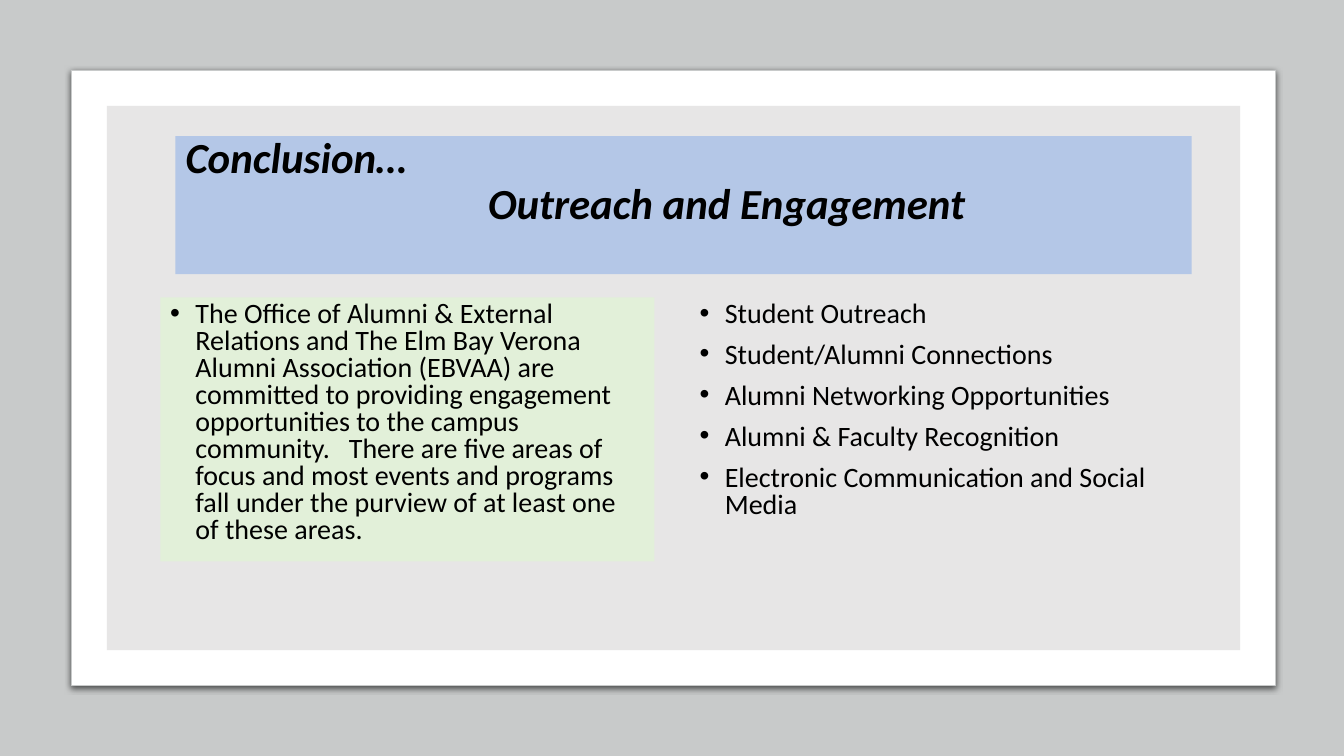
from lxml.etree import SubElement
from pptx import Presentation
from pptx.dml.color import RGBColor
from pptx.enum.shapes import MSO_SHAPE
from pptx.enum.text import MSO_ANCHOR, MSO_AUTO_SIZE, PP_ALIGN
from pptx.oxml.ns import qn
from pptx.util import Inches, Pt

COLORS = {
    "backdrop": "C8CACA",
    "card": "FFFFFF",
    "panel": "E7E6E6",
    "title": "B4C7E7",
    "summary": "E2F0D9",
    "text": "000000",
}
FONT = "Calibri"
SUMMARY = [
    "The Office of Alumni & External Relations and The Elm Bay Verona "
    "Alumni Association (EBVAA) are committed to providing engagement "
    "opportunities to the campus community.   There are five areas of focus "
    "and most events and programs fall under the purview of at least one of "
    "these areas."
]
FOCUS_AREAS = [
    "Student Outreach",
    "Student/Alumni Connections",
    "Alumni Networking Opportunities",
    "Alumni & Faculty Recognition",
    "Electronic Communication and Social Media",
]


def rgb(name):
    return RGBColor.from_string(COLORS[name])


def fill_shape(sp, color):
    sp.fill.solid()
    sp.fill.fore_color.rgb = rgb(color)


def format_run(r, size, bold=False, italic=False):
    r.font.name = FONT
    r.font.size = Pt(size)
    r.font.bold = bold
    r.font.italic = italic
    r.font.color.rgb = rgb("text")


def add_box(s, box, color, kind=MSO_SHAPE.RECTANGLE):
    sp = s.shapes.add_shape(kind, *map(Inches, box))
    sp.shadow.inherit = False
    fill_shape(sp, color)
    sp.line.fill.background()
    return sp


def add_shadow(sp):
    effects = sp.element.spPr.find(qn("a:effectLst"))
    shadow = SubElement(effects, qn("a:outerShdw"), blurRad=str(Pt(4.5)),
                        dist=str(Pt(1.5)), dir="5400000", algn="t", rotWithShape="0")
    color = SubElement(shadow, qn("a:srgbClr"), val=COLORS["text"])
    SubElement(color, qn("a:alpha"), val="63000")


def add_frame(s, box):
    left, top, width, height = box
    add_box(s, box, "backdrop")
    card = add_box(s, (left + 0.71, top + 0.7, width - 1.39, height - 1.4),
                   "card", MSO_SHAPE.ROUNDED_RECTANGLE)
    card.adjustments[0] = 0
    card.line.color.rgb = rgb("backdrop")
    card.line.width = Pt(0.75)
    add_shadow(card)
    add_box(s, (left + 1.06, top + 1.05, width - 2.09, height - 2.1), "panel")


def add_title(s, box):
    title = s.shapes.title
    title.left, title.top, title.width, title.height = map(Inches, box)
    title.element.getparent().append(title.element)
    fill_shape(title, "title")
    tf = title.text_frame
    tf.text = "Conclusion…\nOutreach and Engagement"
    tf.word_wrap = True
    tf.auto_size = MSO_AUTO_SIZE.NONE
    tf.vertical_anchor = MSO_ANCHOR.TOP
    tf.margin_top = 0
    for p, indent in zip(tf.paragraphs, (0, 3)):
        p.alignment = PP_ALIGN.LEFT
        p.line_spacing = 0.9
        p.space_before = Pt(0)
        p._p.get_or_add_pPr().set("marL", str(Inches(indent)))
        format_run(p.runs[0], 30.6, bold=True, italic=True)


def add_bullets(s, box, items, color=None):
    sp = s.shapes.add_textbox(*map(Inches, box))
    if color:
        fill_shape(sp, color)
    tf = sp.text_frame
    tf.word_wrap = True
    tf.text = "\n".join(items)
    for p in tf.paragraphs:
        p.line_spacing = 0.8
        p.space_before = Pt(10)
        pPr = p._p.get_or_add_pPr()
        pPr.set("marL", str(Inches(0.25)))
        pPr.set("indent", str(Inches(-0.25)))
        SubElement(pPr, qn("a:buFont"), typeface="Arial")
        SubElement(pPr, qn("a:buChar"), char="•")
        format_run(p.runs[0], 20)


def main():
    prs = Presentation()
    prs.slide_width = Inches(13.33)
    prs.slide_height = Inches(7.5)
    s = prs.slides.add_slide(prs.slide_layouts[5])
    add_frame(s, (0, 0, 13.33, 7.5))
    add_title(s, (1.74, 1.35, 10.08, 1.37))
    add_bullets(s, (1.59, 2.95, 4.9, 2.62), SUMMARY, "summary")
    add_bullets(s, (6.84, 2.95, 4.98, 2.51), FOCUS_AREAS)
    prs.save("out.pptx")


if __name__ == "__main__":
    main()
